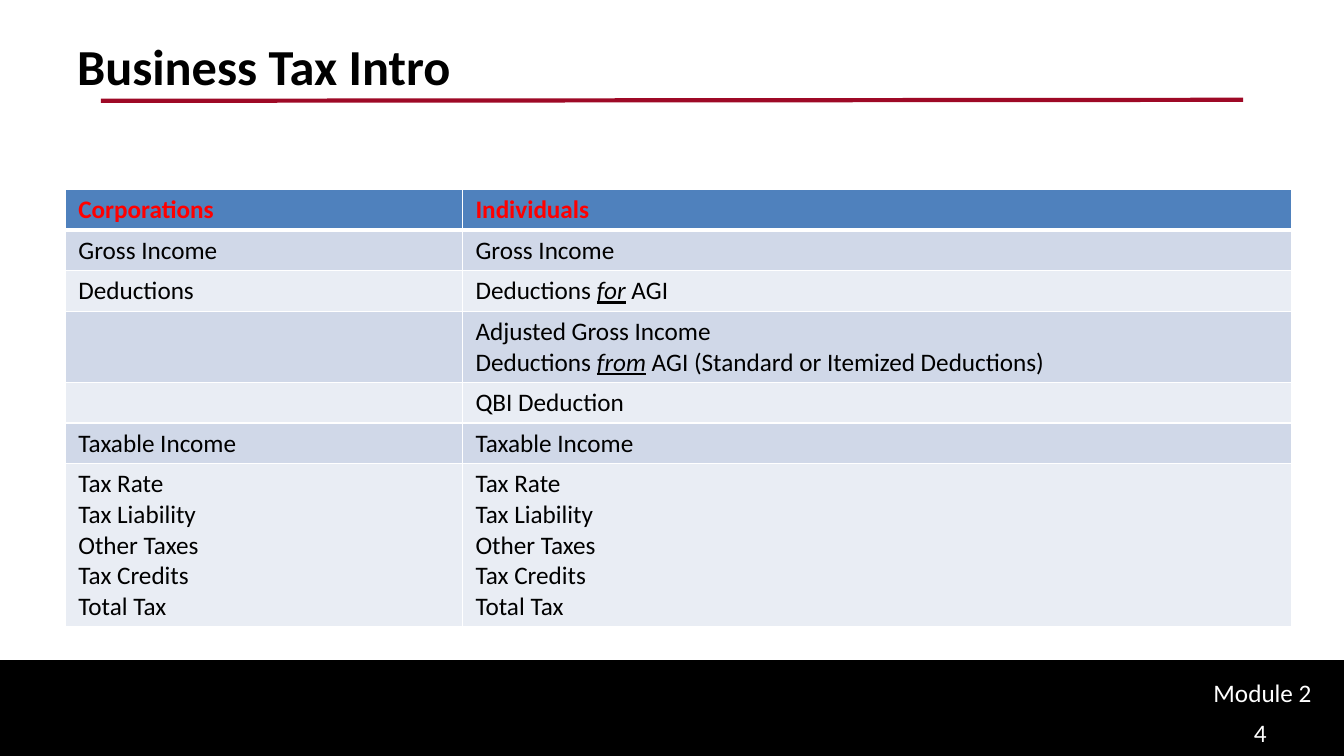
from dataclasses import dataclass

from lxml.etree import SubElement
from pptx import Presentation
from pptx.dml.color import RGBColor
from pptx.enum.shapes import MSO_CONNECTOR as Connector, MSO_SHAPE as Shape
from pptx.enum.text import MSO_ANCHOR as Anchor, PP_ALIGN as Align
from pptx.oxml import parse_xml
from pptx.oxml.ns import nsdecls, qn
from pptx.util import Pt


@dataclass(frozen=True)
class Theme:
    font: str = "Calibri"
    title_size: int = 36
    body_size: int = 18
    black: str = "000000"
    white: str = "FFFFFF"
    rule: str = "9E0926"
    header_fill: str = "4F81BD"
    header_text: str = "FF0000"
    bands: tuple = ("D0D8E8", "E9EDF4")


THEME = Theme()
TAX_STEPS = ["Tax Rate", "Tax Liability", "Other Taxes", "Tax Credits", "Total Tax"]
FORMULA = [
    (["Corporations"], ["Individuals"]),
    (["Gross Income"], ["Gross Income"]),
    (["Deductions"], ["Deductions |for| AGI"]),
    ([], ["Adjusted Gross Income",
          "Deductions |from| AGI (Standard or Itemized Deductions)"]),
    ([], ["QBI Deduction"]),
    (["Taxable Income"], ["Taxable Income"]),
    (TAX_STEPS, TAX_STEPS),
]


def rgb(value):
    return RGBColor.from_string(value)


def write_lines(frame, lines, size, color, bold=False):
    for index, line in enumerate(lines or [""]):
        para = frame.paragraphs[0] if index == 0 else frame.add_paragraph()
        para.alignment = Align.LEFT
        para.font.name = THEME.font
        para.font.size = Pt(size)
        para.font.bold = bold
        para.font.color.rgb = rgb(color)
        for position, part in enumerate(line.split("|")):
            if part:
                span = para.add_run()
                span.text = part
                if position % 2:
                    span.font.italic = True
                    span.font.underline = True


def add_label(page, box, text, size, color, bold=False):
    label = page.shapes.add_textbox(*map(Pt, box))
    frame = label.text_frame
    frame.word_wrap = True
    frame.vertical_anchor = Anchor.TOP
    write_lines(frame, [text], size, color, bold)


def add_heading(page, box, text):
    left, top, width, height = box
    rule = page.shapes.add_connector(
        Connector.STRAIGHT, Pt(left + 24), Pt(top + 50.4), Pt(left + 840), Pt(top + 49.7))
    rule.line.color.rgb = rgb(THEME.rule)
    rule.line.width = Pt(3)
    SubElement(rule.element.spPr, qn("a:effectLst"))
    add_label(page, box, text, THEME.title_size, THEME.black, bold=True)


def add_footer(page, box, module, number):
    left, top, width, height = box
    band = page.shapes.add_shape(Shape.RECTANGLE, *map(Pt, box))
    band.shadow.inherit = False
    band.fill.solid()
    band.fill.fore_color.rgb = rgb(THEME.black)
    band.line.color.rgb = rgb(THEME.black)
    band.line.width = Pt(2)
    right = left + width
    add_label(page, (right - 100.3, top + 8, 95, 29), module, THEME.body_size, THEME.white)
    add_label(page, (right - 71.5, top + 36.8, 65.5, 31), number, THEME.body_size, THEME.white)


def set_borders(cell, widths):
    properties = cell._tc.get_or_add_tcPr()
    for index, (side, width) in enumerate(zip("LRTB", widths)):
        properties.insert(index, parse_xml(
            f'<a:ln{side} {nsdecls("a")} w="{Pt(width)}"><a:solidFill>'
            f'<a:srgbClr val="{THEME.white}"/></a:solidFill></a:ln{side}>'))


def add_formula_table(page, box, rows):
    left, top, width, height = box
    table = page.shapes.add_table(len(rows), 2, *map(Pt, box)).table
    table.horz_banding = False
    first_width = 283.7
    table.columns[0].width = Pt(first_width)
    table.columns[1].width = Pt(width - first_width)
    line_total = sum(max(map(len, row)) for row in rows)
    padding = 7.2
    line_height = (height - padding * len(rows)) / line_total
    for row_index, row in enumerate(rows):
        header = row_index == 0
        table.rows[row_index].height = Pt(padding + line_height * max(map(len, row)))
        for column_index, lines in enumerate(row):
            cell = table.cell(row_index, column_index)
            cell.margin_left = cell.margin_right = Pt(9.2)
            cell.margin_top = cell.margin_bottom = Pt(padding / 2)
            cell.fill.solid()
            fill = THEME.header_fill if header else THEME.bands[(row_index - 1) % 2]
            cell.fill.fore_color.rgb = rgb(fill)
            set_borders(cell, (1, 1, 3 if row_index == 1 else 1, 3 if header else 1))
            color = THEME.header_text if header else THEME.black
            write_lines(cell.text_frame, lines, THEME.body_size, color, header)


def main():
    deck = Presentation()
    deck.slide_width, deck.slide_height = Pt(960), Pt(540)
    page = deck.slides.add_slide(deck.slide_layouts[6])
    add_footer(page, (0, 472.3, 960, 67.7), "Module 2", "4")
    add_heading(page, (48, 21.6, 864, 90), "Business Tax Intro")
    add_formula_table(page, (46.8, 135.4, 876, 312), FORMULA)
    deck.save("out.pptx")


if __name__ == "__main__":
    main()
